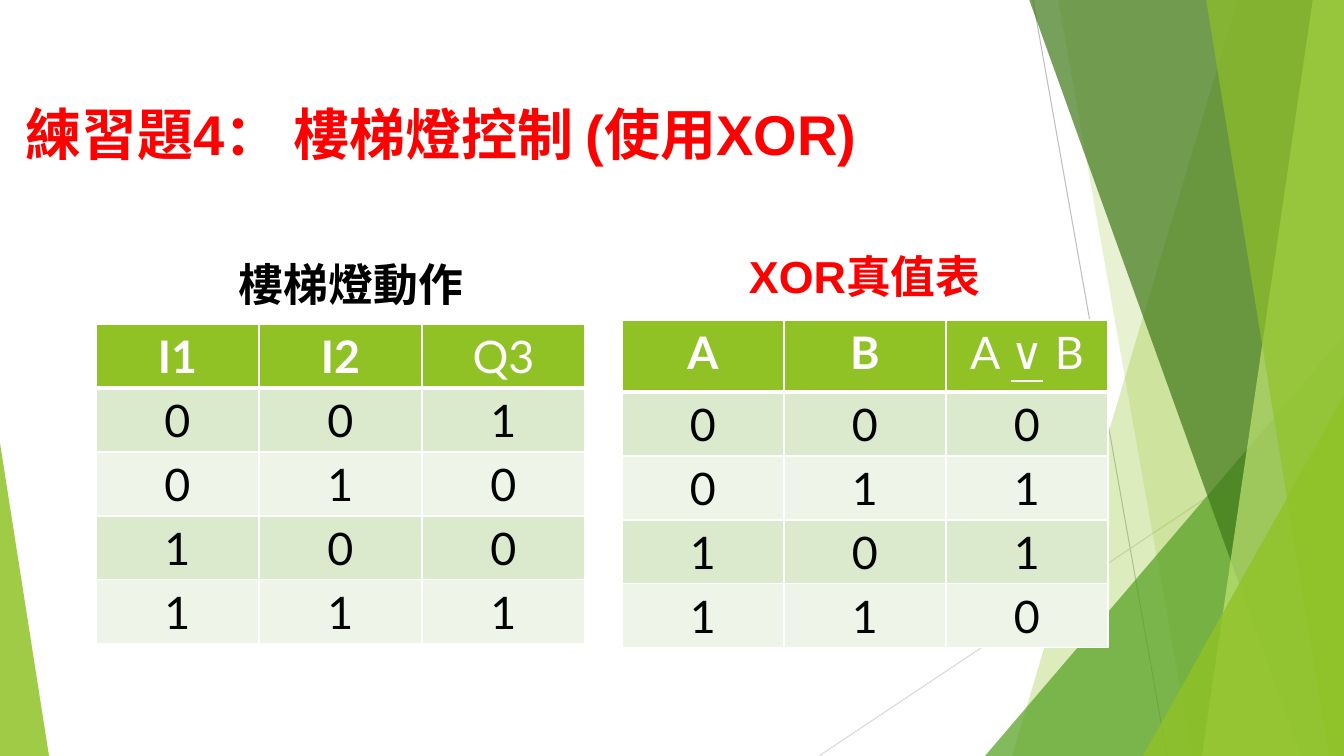
import lxml.etree
import pptx
import pptx.dml.color
import pptx.enum.shapes
import pptx.enum.text
import pptx.oxml.ns
import pptx.util

EMU_PER_PX = 914400 / 100.8
WIDTH, HEIGHT = 1344, 756
COLORS = {
    "lime": "90C226", "green": "54A021", "forest": "3F7819", "pale": "C0E474",
    "gray": "BFBFBF", "light_gray": "D9D9D9", "white": "FFFFFF",
    "black": "000000", "red": "FF0000", "odd_row": "DBE9CD", "even_row": "EEF4E8",
}


def px(length):
    return pptx.util.Emu(round(length * EMU_PER_PX))


def rgb(name):
    return pptx.dml.color.RGBColor.from_string(COLORS[name])


def add_child(parent, tag, **attributes):
    child = lxml.etree.SubElement(parent, pptx.oxml.ns.qn(tag))
    for name, value in attributes.items():
        child.set(name, str(value))
    return child


def add_run(paragraph, text, color, **font_values):
    run = paragraph.add_run()
    run.text = text
    run.font.color.rgb = rgb(color)
    for name, value in font_values.items():
        setattr(run.font, name, value)


def add_label(slide, box, runs, size):
    """Add one line of bold text, given as (text, font name) runs of one colour."""
    left, top, width, height, color = box
    frame = slide.shapes.add_textbox(px(left), px(top), px(width), px(height)).text_frame
    frame.word_wrap = True
    for text, font in runs:
        add_run(frame.paragraphs[0], text, color,
                name=font, size=pptx.util.Pt(size), bold=True)


def paint(shape, color, opacity):
    shape.shadow.inherit = False
    shape.line.fill.background()
    shape.fill.solid()
    shape.fill.fore_color.rgb = rgb(color)
    solid_color = shape.fill._xPr.find(".//" + pptx.oxml.ns.qn("a:srgbClr"))
    add_child(solid_color, "a:alpha", val=opacity * 1000)


def add_hairline(slide, start, end, color):
    line = slide.shapes.add_connector(
        pptx.enum.shapes.MSO_CONNECTOR.STRAIGHT, *map(px, start + end))
    line.line.color.rgb = rgb(color)
    line.line.width = pptx.util.Pt(0.75)
    add_child(line._element.spPr, "a:effectLst")


def add_facet(slide, top_x, bottom_x, color, opacity):
    """Fill from a slanted edge to the right side of the slide."""
    corners = [(top_x, -1), (WIDTH, -1), (WIDTH, HEIGHT), (bottom_x, HEIGHT)]
    builder = slide.shapes.build_freeform(*corners[0], scale=EMU_PER_PX)
    builder.add_line_segments(corners[1:], close=True)
    paint(builder.convert_to_shape(), color, opacity)


def add_corner(slide, left, width, height, apex, color, opacity):
    """Stand a right triangle on the bottom edge of the slide."""
    triangle = slide.shapes.add_shape(
        pptx.enum.shapes.MSO_SHAPE.ISOSCELES_TRIANGLE,
        px(left), px(HEIGHT - height), px(width), px(height))
    triangle.adjustments[0] = apex
    paint(triangle, color, opacity)


def add_backdrop(slide):
    add_hairline(slide, (1033, 0), (1167, HEIGHT), "gray")
    add_hairline(slide, (WIDTH, 406), (819, HEIGHT), "light_gray")
    add_facet(slide, 1238, 1012, "lime", 30)
    add_facet(slide, 1058, 1192, "lime", 20)
    add_corner(slide, 985, 359, 420, 1, "green", 72)
    add_facet(slide, 1029, 1301, "forest", 70)
    add_facet(slide, 1313, 1202, "pale", 70)
    add_facet(slide, 1206, 1329, "lime", 65)
    add_corner(slide, 1143, 201, 360, 1, "lime", 80)
    add_corner(slide, 0, 49, 313, 0, "lime", 85)


def set_borders(cell, row):
    """Draw white borders, thicker between the header and the first data row."""
    properties = cell._tc.get_or_add_tcPr()
    widths = {"L": 1, "R": 1, "T": 3 if row == 1 else 1, "B": 3 if row == 0 else 1}
    for index, (side, width) in enumerate(widths.items()):
        border = add_child(properties, f"a:ln{side}", w=pptx.util.Pt(width))
        add_child(add_child(border, "a:solidFill"), "a:srgbClr", val=COLORS["white"])
        properties.insert(index, border)


def add_truth_table(slide, box, header_height, headers, outputs):
    """Add a two-input table; each header is a list of (text, format) runs."""
    left, top, width, row_height = box
    table = slide.shapes.add_table(
        5, 3, px(left), px(top), px(width), px(header_height + 4 * row_height)).table
    for column in table.columns:
        column.width = px(width / 3)
    rows = [headers]
    for number, output in enumerate(outputs):
        values = (number // 2, number % 2, output)
        rows.append([[(str(value), {})] for value in values])
    for row, cells in enumerate(rows):
        table.rows[row].height = px(row_height if row else header_height)
        fill = "lime" if row == 0 else "odd_row" if row % 2 else "even_row"
        for column, runs in enumerate(cells):
            cell = table.cell(row, column)
            cell.fill.solid()
            cell.fill.fore_color.rgb = rgb(fill)
            set_borders(cell, row)
            paragraph = cell.text_frame.paragraphs[0]
            paragraph.alignment = pptx.enum.text.PP_ALIGN.CENTER
            for text, values in runs:
                font_values = {"name": "Lato", "size": pptx.util.Pt(32), "bold": False}
                add_run(paragraph, text, "black" if row else "white",
                        **{**font_values, **values})


def build_slide(slide):
    bold = {"bold": True}
    add_backdrop(slide)
    add_label(slide, (16, 95, 1183, 80, "red"),
              [("練習題4", "Arial"), ("： ", "Roboto"), ("樓梯燈控制 (使用XOR)", "Arial")], 40)
    add_truth_table(slide, (96, 324, 489, 64), 64,
                    [[("I1", bold)], [("I2", bold)], [("Q3", {})]], (1, 0, 0, 1))
    add_truth_table(slide, (622, 320, 486, 64), 72,
                    [[("A", bold)], [("B", bold)],
                     [("A\u00a0".replace("\u00a0", " "), {}), ("∨", {"underline": True}),
                      (" B", {})]], (0, 1, 1, 0))
    add_label(slide, (739, 244, 320, 70, "red"), [("XOR真值表", "Arial")], 32)
    add_label(slide, (229, 252, 320, 70, "black"), [("樓梯燈動作", "Arial")], 32)


def main():
    presentation = pptx.Presentation()
    presentation.slide_width, presentation.slide_height = px(WIDTH), px(HEIGHT)
    build_slide(presentation.slides.add_slide(presentation.slide_layouts[6]))
    presentation.save("out.pptx")


if __name__ == "__main__":
    main()
